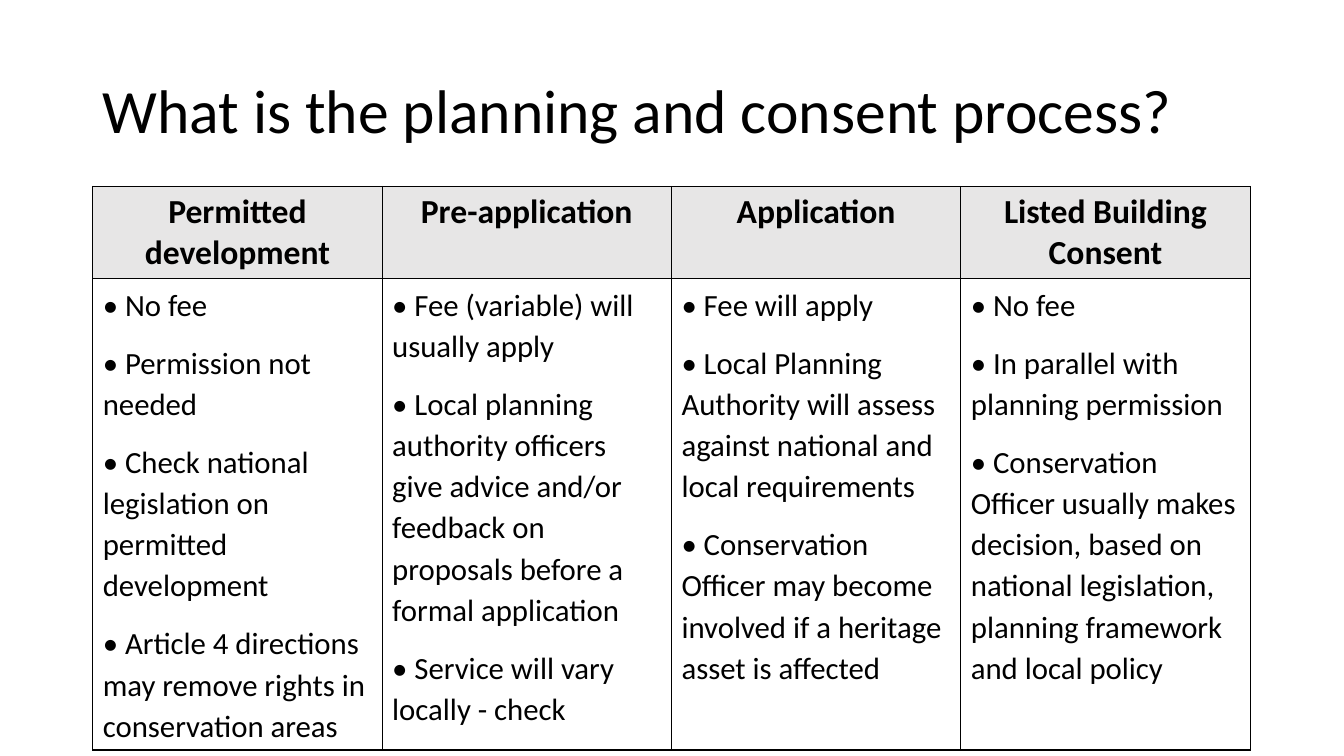
from lxml.etree import SubElement
from pptx import Presentation
from pptx.dml.color import RGBColor
from pptx.enum.text import MSO_ANCHOR, PP_ALIGN
from pptx.oxml.ns import qn
from pptx.util import Inches, Pt

TITLE = "What is the planning and consent process?"
STAGES = {
    "Permitted development": [
        "No fee",
        "Permission not needed",
        "Check national legislation on permitted development",
        "Article 4 directions may remove rights in conservation areas",
    ],
    "Pre-application": [
        "Fee (variable) will usually apply",
        "Local planning authority officers give advice and/or feedback "
        "on proposals before a formal application",
        "Service will vary locally - check",
    ],
    "Application": [
        "Fee will apply",
        "Local Planning Authority will assess against national and "
        "local requirements",
        "Conservation Officer may become involved if a heritage asset "
        "is affected",
    ],
    "Listed Building Consent": [
        "No fee",
        "In parallel with planning permission",
        "Conservation Officer usually makes decision, based on national "
        "legislation, planning framework and local policy",
    ],
}


def color(code):
    return RGBColor.from_string(code)


def write(frame, lines, size, bold=False, align=PP_ALIGN.LEFT, space=1.0, before=0):
    frame.word_wrap = True
    for i, line in enumerate(lines):
        para = frame.add_paragraph() if i else frame.paragraphs[0]
        para.alignment = align
        para.line_spacing = space
        para.space_before = Pt(before)
        run = para.add_run()
        run.text = line
        font = run.font
        font.name = "Calibri"
        font.size = Pt(size)
        font.bold = bold
        font.color.rgb = color("000000")


def border(cell):
    props = cell._tc.get_or_add_tcPr()
    for i, side in enumerate(("lnL", "lnR", "lnT", "lnB")):
        line = props.makeelement(qn(f"a:{side}"), {"w": str(Pt(1))})
        fill = SubElement(line, qn("a:solidFill"))
        SubElement(fill, qn("a:srgbClr"), val="000000")
        props.insert(i, line)


def paint(cell, code):
    cell.fill.solid()
    cell.fill.fore_color.rgb = color(code)
    border(cell)


def add_title(slide):
    box = slide.shapes.add_textbox(Inches(0.92), Inches(0.4), Inches(11.5), Inches(1.45))
    frame = box.text_frame
    frame.vertical_anchor = MSO_ANCHOR.MIDDLE
    write(frame, [TITLE], 44, space=0.9)


def add_stages(slide):
    count = len(STAGES)
    shape = slide.shapes.add_table(
        2, count, Inches(0.92), Inches(1.85), Inches(2.87 * count), Inches(5.59)
    )
    table = shape.table
    for row, height in zip(table.rows, (0.91, 4.68)):
        row.height = Inches(height)
    for col, (stage, points) in enumerate(STAGES.items()):
        table.columns[col].width = Inches(2.87)
        head, body = table.cell(0, col), table.cell(1, col)
        write(head.text_frame, [stage], 24, bold=True, align=PP_ALIGN.CENTER)
        paint(head, "E7E6E6")
        lines = [f"• {point}" for point in points]
        write(body.text_frame, lines, 22, space=1.1, before=12)
        paint(body, "FFFFFF")


def main():
    deck = Presentation()
    deck.slide_width, deck.slide_height = Inches(13.33), Inches(7.5)
    slide = deck.slides.add_slide(deck.slide_layouts[6])
    add_title(slide)
    add_stages(slide)
    deck.save("out.pptx")


if __name__ == "__main__":
    main()
